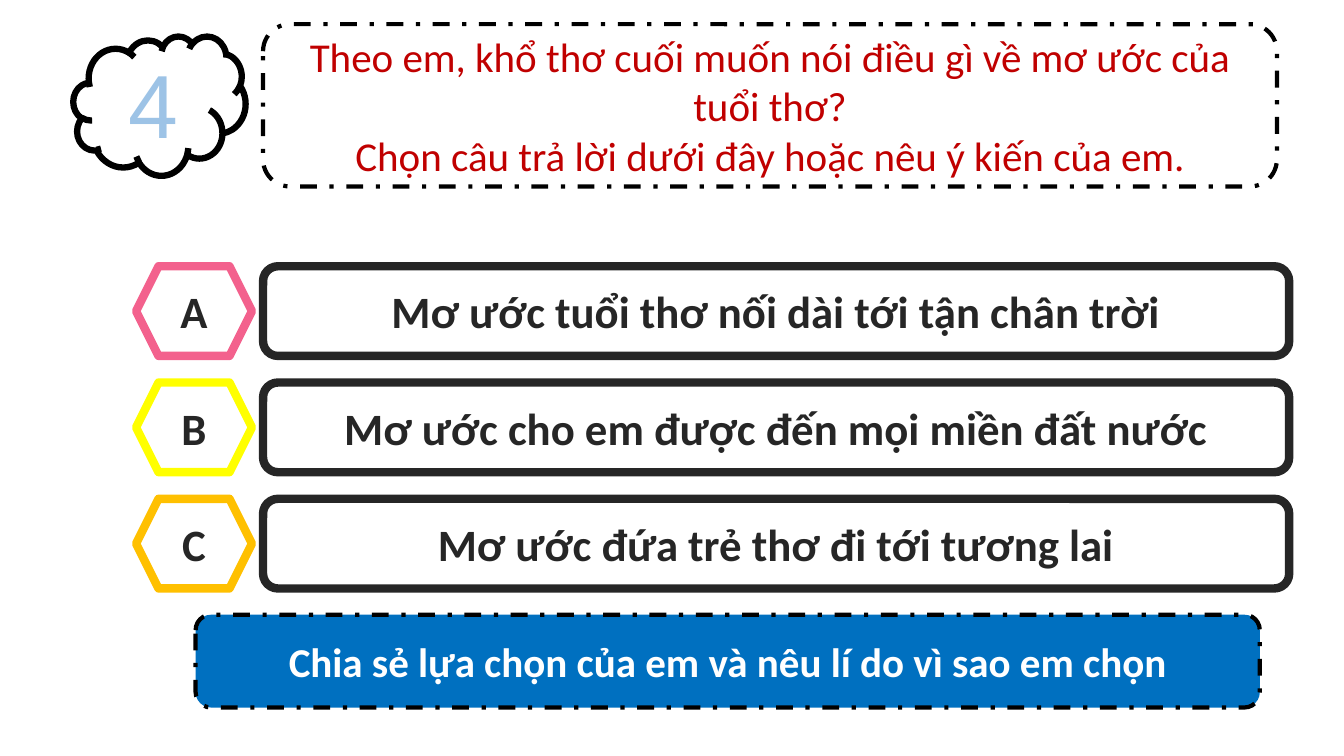
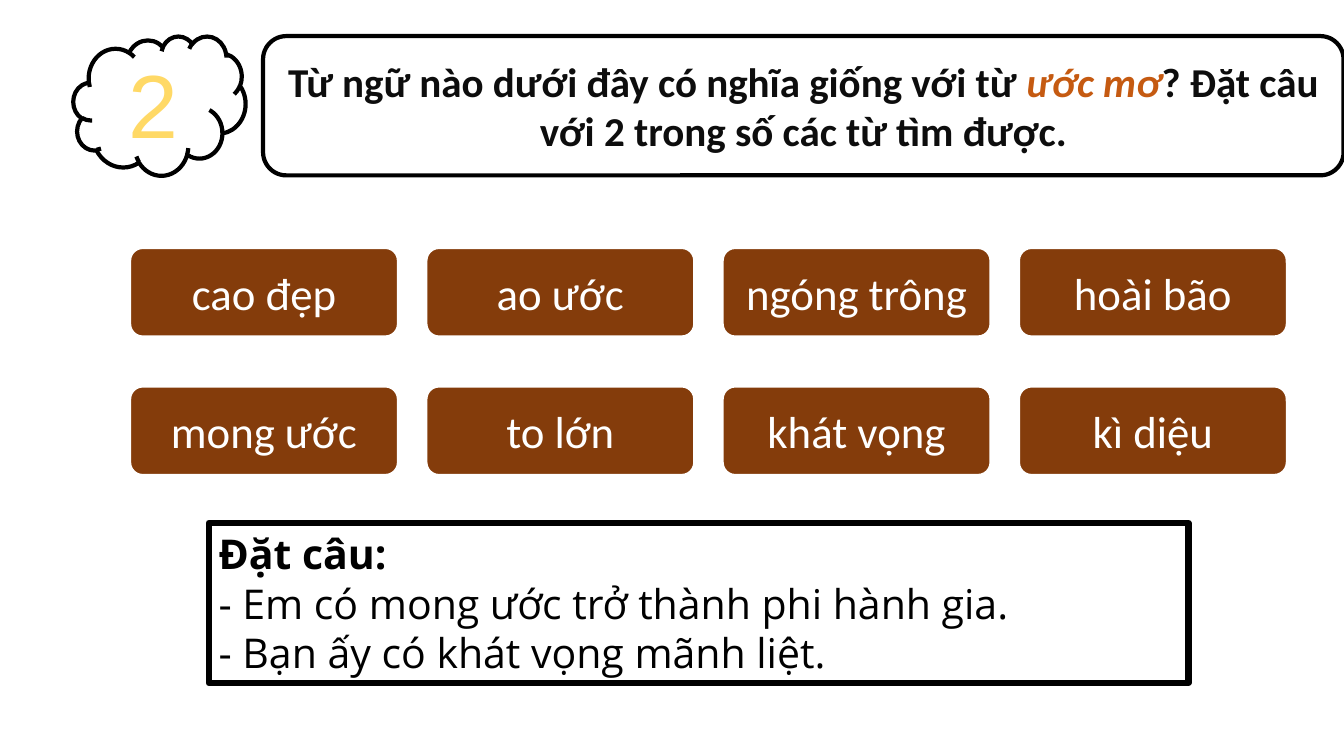
from lxml import etree
from pptx import Presentation
from pptx.dml.color import RGBColor
from pptx.enum.dml import MSO_LINE
from pptx.enum.shapes import MSO_SHAPE
from pptx.enum.text import MSO_ANCHOR, MSO_AUTO_SIZE, PP_ALIGN
from pptx.oxml.ns import qn
from pptx.util import Cm, Pt

CLOUD, HEXAGON = MSO_SHAPE.CLOUD, MSO_SHAPE.HEXAGON
ROUNDED, RECTANGLE = MSO_SHAPE.ROUNDED_RECTANGLE, MSO_SHAPE.RECTANGLE
DASH_DOT = MSO_LINE.DASH_DOT
CENTER, JUSTIFY = PP_ALIGN.CENTER, PP_ALIGN.JUSTIFY
MIDDLE, TOP = MSO_ANCHOR.MIDDLE, MSO_ANCHOR.TOP
NO_FIT = MSO_AUTO_SIZE.NONE
TITLE_ONLY = 5

COLORS = {
    "white": "FFFFFF", "black": "000000", "dark": "262626", "ink": "0D0D0D",
    "red": "C00000", "orange": "C55A11", "brown": "843C0B", "blue": "0070C0",
    "pink": "F3618D", "yellow": "FFFF00", "gold": "FFC000",
    "sky": "9DC3E6", "sand": "FFD966",
}

# Text formats
NUMBER = {"name": "Arial", "size": Pt(64)}
QUESTION = {"name": "Calibri", "size": Pt(29.3)}
ANSWER = {"name": "Calibri", "size": Pt(32), "bold": True, "color": "dark"}
CALL = {"name": "Calibri", "size": Pt(29.3), "bold": True, "color": "white"}
WORD = {"name": "Calibri", "size": Pt(32), "color": "white"}
SENTENCE = {"name": "Open Sans", "size": Pt(29.3), "color": "black"}

# Shared places, in centimetres: left, top, width, height
CLOUD_BOX = (1.85, 0.91, 4.34, 3.51)


def color(name):
    return RGBColor.from_string(COLORS[name])


def place(shape, box):
    for name, length in zip(("left", "top", "width", "height"), box):
        setattr(shape, name, Cm(length))


def write(shape, paragraphs, style, align=CENTER, anchor=MIDDLE, spacing=None):
    """Each paragraph is a list of (text, format changes) spans."""
    frame = shape.text_frame
    frame.word_wrap = True
    frame.auto_size = NO_FIT
    frame.vertical_anchor = anchor
    for index, spans in enumerate(paragraphs):
        para = frame.add_paragraph() if index else frame.paragraphs[0]
        para.alignment = align
        para.line_spacing = spacing
        for text, changes in spans:
            span = para.add_run()
            span.text = text
            for name, value in {**style, **changes}.items():
                if name == "color":
                    span.font.color.rgb = color(value)
                else:
                    setattr(span.font, name, value)


def add_panel(page, kind, box, fill, line, weight, dash=None):
    panel = page.shapes.add_shape(kind, *(Cm(length) for length in box))
    panel.shadow.inherit = False
    panel.fill.solid()
    panel.fill.fore_color.rgb = color(fill)
    panel.line.color.rgb = color(line)
    panel.line.width = Pt(weight)
    if dash is not None:
        panel.line.dash_style = dash
    return panel


def outline_text(shape, name, weight):
    for span in shape.text_frame.paragraphs[0].runs:
        line = etree.Element(qn("a:ln"), w=str(Pt(weight)))
        fill = etree.SubElement(line, qn("a:solidFill"))
        etree.SubElement(fill, qn("a:srgbClr"), val=COLORS[name])
        span.font._element.insert(0, line) if hasattr(span.font, "_element") \
            else span._r.get_or_add_rPr().insert(0, line)


def add_number(page, box, number, tint, weight):
    cloud = add_panel(page, CLOUD, box, "white", "black", weight)
    write(cloud, [[(number, {"color": tint})]], NUMBER)
    outline_text(cloud, "dark", 2.25)


def add_question(page, box, paragraphs, style, dash=None):
    """A rounded frame with the slide title inside it."""
    left, top, width, height = box
    inset = 0.2
    frame = add_panel(page, ROUNDED, box, "white", "black", 3, dash)
    title = page.shapes.title
    place(title, (left + inset, top + inset,
                  width - 2 * inset, height - 2 * inset))
    write(title, paragraphs, {**QUESTION, **style})
    frame._element.addnext(title._element)


def add_answers(page, box, answers):
    """Rows of a lettered hexagon and a wide bar."""
    left, top, width, height = box
    row_height, letter_width, bar_offset = 2.26, 2.92, 3.2
    pitch = (height - row_height) / (len(answers) - 1)
    for row, (letter, tint, text) in enumerate(answers):
        row_top = top + row * pitch
        badge = add_panel(page, HEXAGON,
                          (left, row_top, letter_width, row_height),
                          "white", tint, 6)
        bar = add_panel(page, ROUNDED,
                        (left + bar_offset, row_top,
                         width - bar_offset, row_height),
                        "white", "dark", 6)
        for shape, label in ((badge, letter), (bar, text)):
            write(shape, [[(label, {})]], ANSWER)


def add_call(page, box, text):
    call = add_panel(page, ROUNDED, box, "blue", "black", 3, DASH_DOT)
    write(call, [[(text, {})]], CALL)


def add_words(page, box, rows):
    """A grid of word tiles."""
    left, top, width, height = box
    tile_width, tile_height = 6.91, 2.39
    step_x = (width - tile_width) / (len(rows[0]) - 1)
    step_y = (height - tile_height) / (len(rows) - 1)
    for row, words in enumerate(rows):
        for column, word in enumerate(words):
            tile = add_panel(page, ROUNDED,
                             (left + column * step_x, top + row * step_y,
                              tile_width, tile_height),
                             "brown", "white", 6)
            write(tile, [[(word, {})]], WORD)


def add_sentences(page, box, heading, sentences):
    panel = add_panel(page, RECTANGLE, box, "white", "black", 4.5)
    paragraphs = [[(heading, {"bold": True})]]
    paragraphs += [[(sentence, {})] for sentence in sentences]
    write(panel, paragraphs, SENTENCE, JUSTIFY, TOP, Pt(35.5))


def build_choice_slide(deck):
    page = deck.slides.add_slide(deck.slide_layouts[TITLE_ONLY])
    add_number(page, CLOUD_BOX, "4", "sky", 4.5)
    add_question(page, (6.63, 0.61, 25.55, 4.09), [
        [("Theo em, khổ thơ cuối muốn nói điều gì về mơ ước của tuổi thơ?", {})],
        [("Chọn câu trả lời dưới đây hoặc nêu ý kiến của em.", {})],
    ], {"color": "red"}, DASH_DOT)
    add_answers(page, (3.43, 6.71, 29.06, 8.12), [
        ("A", "pink", "Mơ ước tuổi thơ nối dài tới tận chân trời"),
        ("B", "yellow", "Mơ ước cho em được đến mọi miền đất nước"),
        ("C", "gold", "Mơ ước đứa trẻ thơ đi tới tương lai"),
    ])
    add_call(page, (4.93, 15.49, 26.82, 2.34),
             "Chia sẻ lựa chọn của em và nêu lí do vì sao em chọn")


def build_word_slide(deck):
    page = deck.slides.add_slide(deck.slide_layouts[TITLE_ONLY])
    add_number(page, CLOUD_BOX, "2", "sand", 3)
    add_question(page, (6.63, 0.91, 27.23, 3.51), [[
        ("Từ ngữ nào dưới đây có nghĩa giống với từ ", {}),
        ("ước mơ", {"color": "orange", "italic": True}),
        ("? Đặt câu với 2 trong số các từ tìm được.", {}),
    ]], {"color": "ink", "bold": True})
    add_words(page, (3.2, 6.17, 29.31, 5.88), [
        ("cao đẹp", "ao ước", "ngóng trông", "hoài bão"),
        ("mong ước", "to lớn", "khát vọng", "kì diệu"),
    ])
    add_sentences(page, (5.26, 13.18, 24.69, 4.03), "Đặt câu:", [
        "- Em có mong ước trở thành phi hành gia.",
        "- Bạn ấy có khát vọng mãnh liệt.",
    ])


def main():
    deck = Presentation()
    deck.slide_width, deck.slide_height = Cm(33.87), Cm(19.05)
    build_choice_slide(deck)
    build_word_slide(deck)
    deck.save("out.pptx")


if __name__ == "__main__":
    main()
